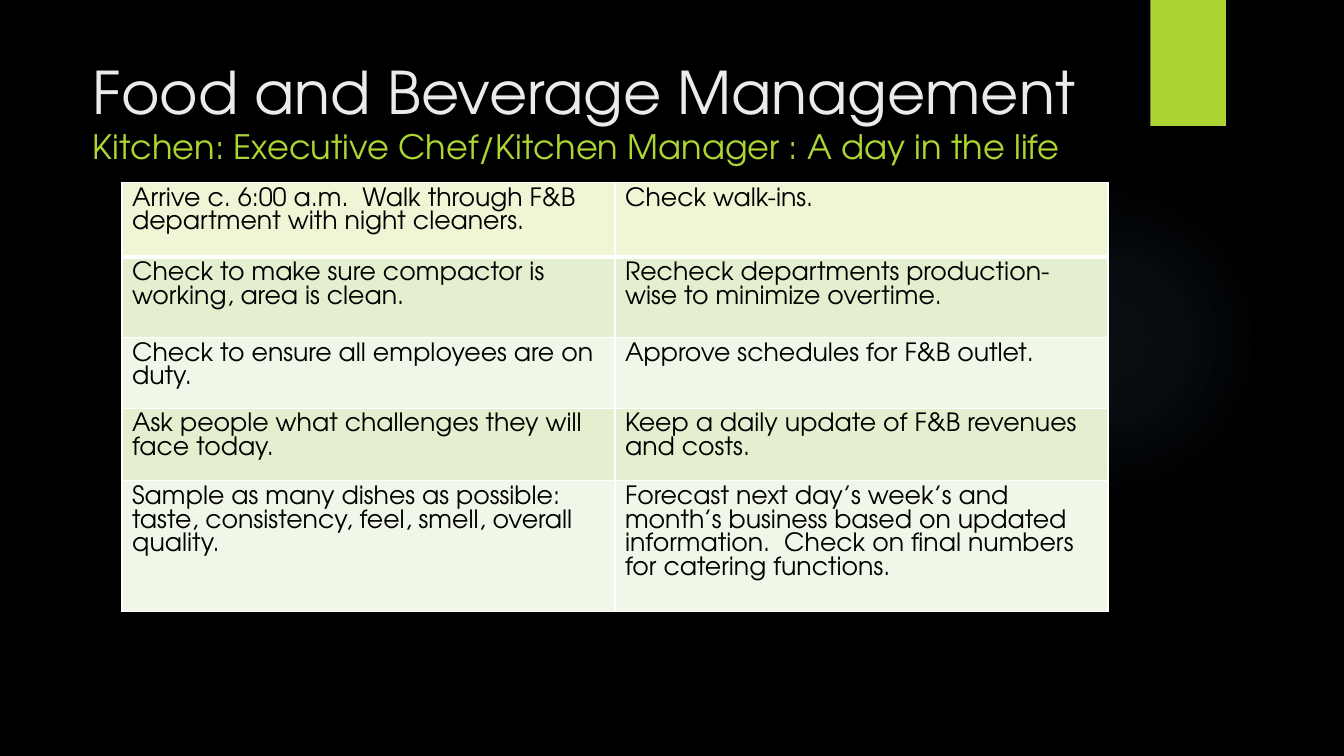
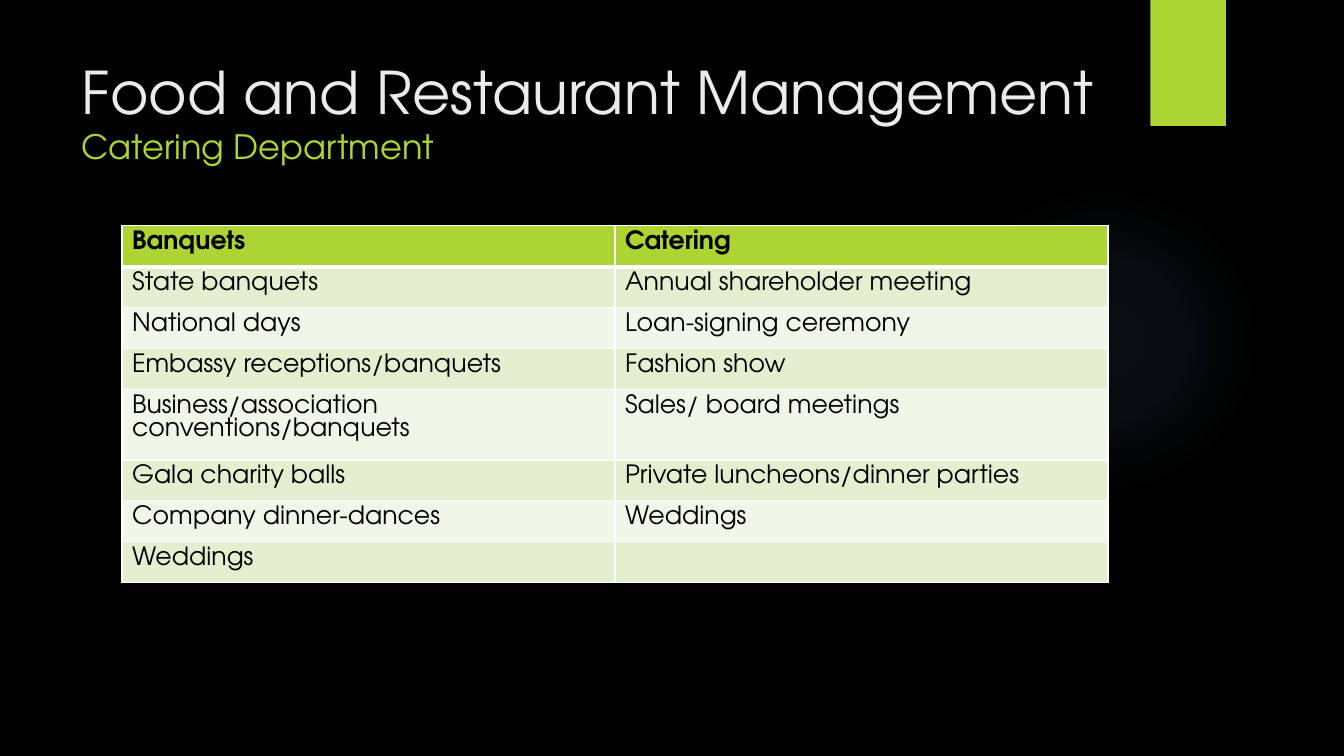
"""Build two food and beverage slides, each with a heading and a two-column table."""

from dataclasses import dataclass

import pptx
import pptx.dml.color
import pptx.enum.shapes
import pptx.enum.text
import pptx.oxml
import pptx.oxml.ns
import pptx.util

Inches = pptx.util.Inches
Pt = pptx.util.Pt

FONT = "TeX Gyre Adventor"
BLACK = "000000"
WHITE = "FFFFFF"
TITLE_GREY = "EBEBEB"
LIME = "ACD433"
GLOW_BLUE = "7AC4F0"
PALE_LIME = "EEF6D6"
BAND_FILLS = ("E3EFCE", "F1F7E8")
GLOW_STOPS = ((0, 7), (36, 6), (69, 0))
TABLE_LEFT = 1.21
COLUMN_WIDTH = 4.89
SINGLE_LINE_ROW = 2.84 / 7
THIN_BORDER = 1
HEADER_BORDER = 3


@dataclass(frozen=True)
class Row:
    height: float
    left: str
    right: str


@dataclass(frozen=True)
class TableSlide:
    title: str
    subtitle: str
    title_left: float
    title_width: float
    title_height: float
    table_top: float
    first_fill: str
    first_bold: bool
    rows: tuple[Row, ...]


SLIDES = (
    TableSlide(
        "Food and Beverage Management",
        "Kitchen: Executive Chef/Kitchen Manager : A day in the life",
        0.82, 10.18, 1.22, 1.81, PALE_LIME, False,
        (
            Row(0.74, "Arrive c. 6:00 a.m.  Walk through F&B department with night cleaners.",
                "Check walk-ins."),
            Row(0.8, "Check to make sure compactor is working, area is clean.",
                "Recheck departments production-wise to minimize overtime."),
            Row(0.64, "Check to ensure all employees are on duty.",
                "Approve schedules for F&B outlet."),
            Row(0.72, "Ask people what challenges they will face today.",
                "Keep a daily update of F&B revenues and costs."),
            Row(1.13, "Sample as many dishes as possible: taste, consistency, feel, smell, "
                "overall quality.",
                "Forecast next day’s week’s and month’s business based on updated "
                "information.  Check on final numbers for catering functions."),
        ),
    ),
    TableSlide(
        "Food and Restaurant Management",
        "Catering Department",
        0.71, 10.29, 1.53, 2.24, LIME, True,
        (
            Row(SINGLE_LINE_ROW, "Banquets", "Catering"),
            Row(SINGLE_LINE_ROW, "State banquets", "Annual shareholder meeting"),
            Row(SINGLE_LINE_ROW, "National days", "Loan-signing ceremony"),
            Row(SINGLE_LINE_ROW, "Embassy receptions/banquets", "Fashion show"),
            Row(0.57, "Business/association conventions/banquets", "Sales/ board meetings"),
            Row(SINGLE_LINE_ROW, "Gala charity balls", "Private luncheons/dinner parties"),
            Row(SINGLE_LINE_ROW, "Company dinner-dances", "Weddings"),
            Row(SINGLE_LINE_ROW, "Weddings", ""),
        ),
    ),
)


def paint(fill, color: str) -> None:
    fill.solid()
    fill.fore_color.rgb = pptx.dml.color.RGBColor.from_string(color)


def add_plain_shape(page, kind, left: float, top: float, width: float, height: float):
    shape = page.shapes.add_shape(
        kind, Inches(left), Inches(top), Inches(width), Inches(height)
    )
    shape.shadow.inherit = False
    shape.line.fill.background()
    return shape


def add_glow(page) -> None:
    glow = add_plain_shape(
        page, pptx.enum.shapes.MSO_SHAPE.OVAL, 9.41, 1.83, 3.08, 3.08
    )
    stops = "".join(
        f'<a:gs pos="{position * 1000}"><a:srgbClr val="{GLOW_BLUE}">'
        f'<a:alpha val="{opacity * 1000}"/></a:srgbClr></a:gs>'
        for position, opacity in GLOW_STOPS
    )
    gradient = pptx.oxml.parse_xml(
        f'<a:gradFill {pptx.oxml.ns.nsdecls("a")} rotWithShape="1"><a:gsLst>{stops}</a:gsLst>'
        '<a:path path="circle"><a:fillToRect l="50000" t="50000" r="50000" b="50000"/>'
        "</a:path></a:gradFill>"
    )
    geometry = glow._element.spPr.find(pptx.oxml.ns.qn("a:prstGeom"))
    geometry.addnext(gradient)


def add_tab(page) -> None:
    tab = add_plain_shape(
        page, pptx.enum.shapes.MSO_SHAPE.RECTANGLE, 11.41, 0, 0.75, 1.25
    )
    paint(tab.fill, LIME)


def add_title(page, content: TableSlide) -> None:
    box = page.shapes.add_textbox(
        Inches(content.title_left), Inches(0.5),
        Inches(content.title_width), Inches(content.title_height),
    )
    box.text_frame.word_wrap = True
    box.text_frame.vertical_anchor = pptx.enum.text.MSO_ANCHOR.TOP
    para = box.text_frame.paragraphs[0]
    para.font.name = FONT
    lines = ((content.title, 42, TITLE_GREY), (content.subtitle, 24, LIME))
    for index, (text, size, color) in enumerate(lines):
        if index:
            para.add_line_break()
        span = para.add_run()
        span.text = text
        span.font.name = FONT
        span.font.size = Pt(size)
        paint(span.font.fill, color)


def set_borders(cell, top: float, bottom: float) -> None:
    properties = cell._tc.get_or_add_tcPr()
    widths = {"L": THIN_BORDER, "R": THIN_BORDER, "T": top, "B": bottom}
    for side, width in widths.items():
        properties.append(pptx.oxml.parse_xml(
            f'<a:ln{side} {pptx.oxml.ns.nsdecls("a")} w="{Pt(width)}">'
            f'<a:solidFill><a:srgbClr val="{WHITE}"/></a:solidFill></a:ln{side}>'
        ))


def fill_cell(cell, text: str, fill: str, bold: bool) -> None:
    paint(cell.fill, fill)
    cell.text = text
    para = cell.text_frame.paragraphs[0]
    para.font.name = FONT
    para.font.size = Pt(18)
    para.font.bold = bold
    paint(para.font.fill, BLACK)


def add_table(page, content: TableSlide) -> None:
    height = sum(row.height for row in content.rows)
    table = page.shapes.add_table(
        len(content.rows), 2, Inches(TABLE_LEFT), Inches(content.table_top),
        Inches(2 * COLUMN_WIDTH), Inches(height),
    ).table
    for column in table.columns:
        column.width = Inches(COLUMN_WIDTH)
    for index, row in enumerate(content.rows):
        table.rows[index].height = Inches(row.height)
        is_first = index == 0
        fill = content.first_fill if is_first else BAND_FILLS[(index - 1) % 2]
        top = HEADER_BORDER if index == 1 else THIN_BORDER
        bottom = HEADER_BORDER if is_first else THIN_BORDER
        for column_index, text in enumerate((row.left, row.right)):
            cell = table.cell(index, column_index)
            set_borders(cell, top, bottom)
            fill_cell(cell, text, fill, is_first and content.first_bold)


def main() -> None:
    deck = pptx.Presentation()
    deck.slide_width = Inches(13.33)
    deck.slide_height = Inches(7.5)
    paint(deck.slide_master.background.fill, BLACK)
    for content in SLIDES:
        page = deck.slides.add_slide(deck.slide_layouts[6])
        add_glow(page)
        add_tab(page)
        add_title(page, content)
        add_table(page, content)
    deck.save("out.pptx")


if __name__ == "__main__":
    main()
